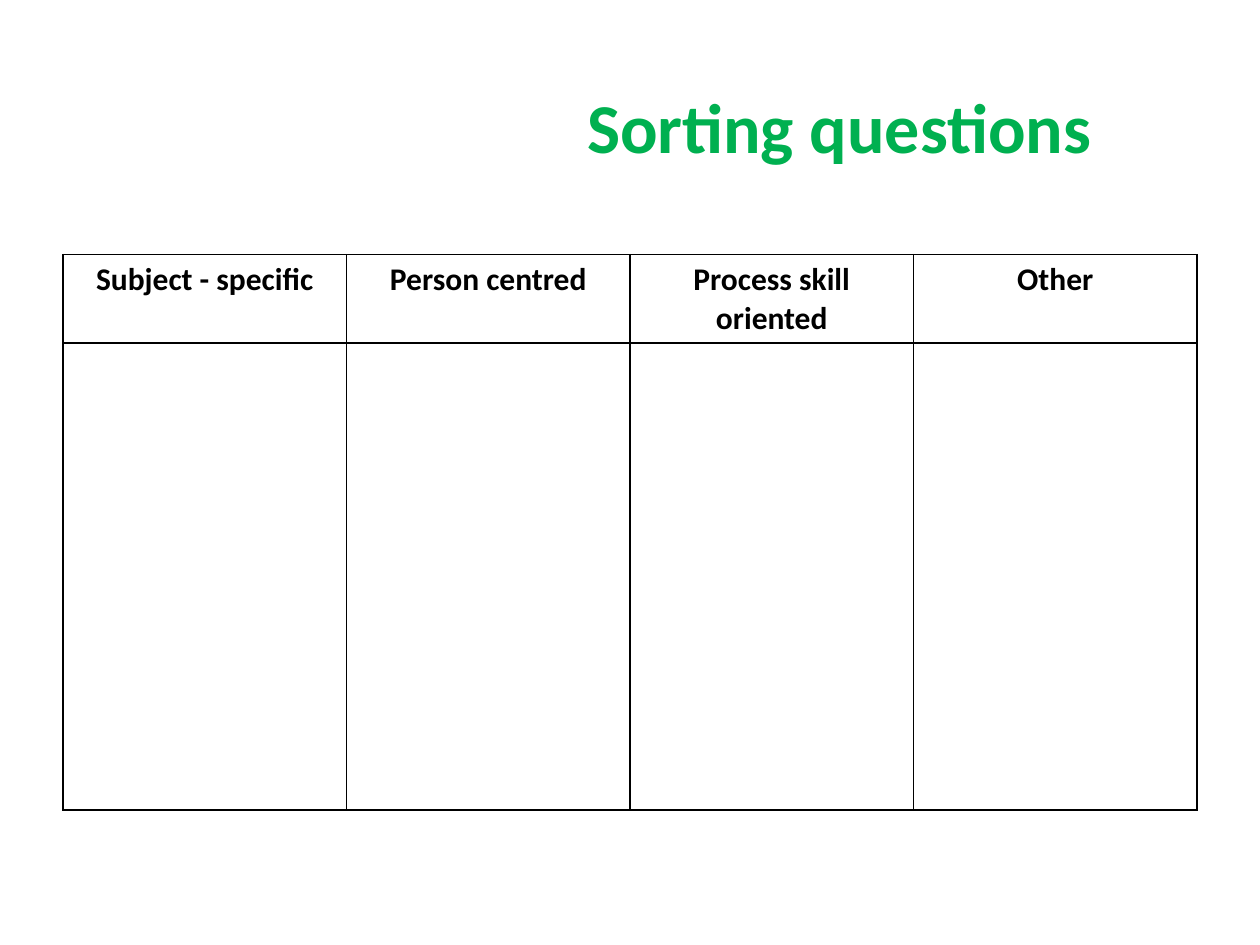
"""Build the question sorting slide."""
from lxml import etree
from pptx import Presentation
from pptx.dml.color import RGBColor
from pptx.enum.text import MSO_ANCHOR as Anchor, PP_ALIGN as Align
from pptx.oxml.ns import qn
from pptx.util import Inches, Pt

CATEGORIES = ["Subject - specific", "Person centred", "Process skill oriented", "Other"]
ROW_HEIGHTS = [0.7, 3.71]
COLUMN_WIDTH = 2.25


def color(hex_code):
    """Turn a hex string into a colour."""
    return RGBColor.from_string(hex_code)


def write_centred(frame, text, size, hex_code):
    """Write one bold centred paragraph in a text frame."""
    para = frame.paragraphs[0]
    para.text = text
    para.alignment = Align.CENTER
    font = para.font
    font.name, font.size, font.bold = "Calibri", Pt(size), True
    font.color.rgb = color(hex_code)


def add_title(slide, text):
    """Add the slide title."""
    box = slide.shapes.add_textbox(Inches(3.82), Inches(0.3), Inches(5.68), Inches(1.4))
    frame = box.text_frame
    frame.word_wrap = True
    frame.vertical_anchor = Anchor.MIDDLE
    write_centred(frame, text, 40, "00B050")


def set_borders(cell, hex_code, width):
    """Draw a solid line on all four sides of a cell."""
    properties = cell._tc.get_or_add_tcPr()
    for index, side in enumerate(("a:lnL", "a:lnR", "a:lnT", "a:lnB")):
        line = etree.Element(qn(side), w=str(Pt(width)))
        fill = etree.SubElement(line, qn("a:solidFill"))
        etree.SubElement(fill, qn("a:srgbClr"), val=hex_code)
        properties.insert(index, line)


def add_sorting_table(slide, headings):
    """Add a table with a heading row and an empty row for sorting."""
    frame = slide.shapes.add_table(
        len(ROW_HEIGHTS), len(headings), Inches(0.5), Inches(2.02),
        Inches(COLUMN_WIDTH * len(headings)), Inches(sum(ROW_HEIGHTS)))
    table = frame.table
    table.first_row = table.horz_banding = False
    for row, height in zip(table.rows, ROW_HEIGHTS):
        row.height = Inches(height)
    for column in table.columns:
        column.width = Inches(COLUMN_WIDTH)
    for cell in table.iter_cells():
        cell.fill.background()
        set_borders(cell, "000000", 1)
    for cell, heading in zip(table.rows[0].cells, headings):
        write_centred(cell.text_frame, heading, 18, "000000")


def main():
    """Build and save the deck."""
    deck = Presentation()
    deck.slide_width, deck.slide_height = Inches(10), Inches(7.5)
    slide = deck.slides.add_slide(deck.slide_layouts[6])
    add_title(slide, "Sorting questions")
    add_sorting_table(slide, CATEGORIES)
    deck.save("out.pptx")


if __name__ == "__main__":
    main()
